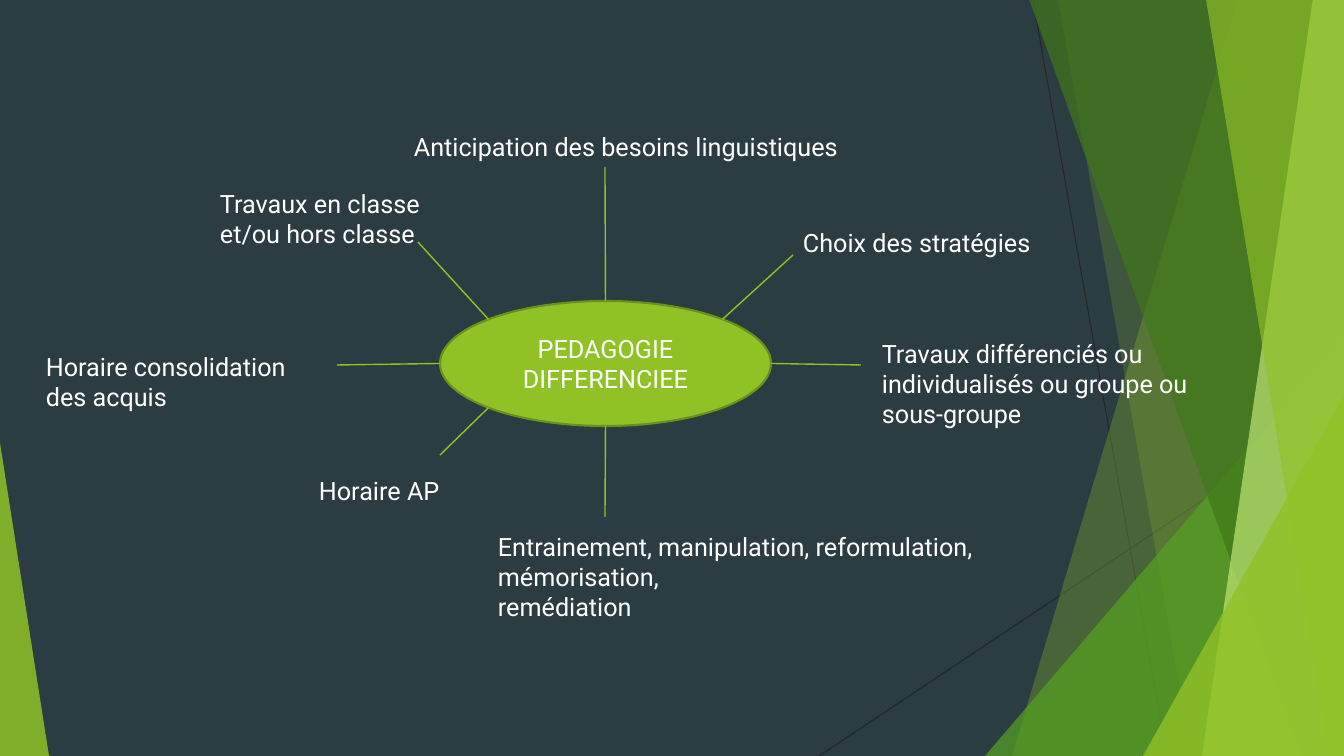
from math import cos, sin, radians
from pptx import Presentation
from pptx.dml.color import RGBColor
from pptx.enum.shapes import MSO_CONNECTOR as Link, MSO_SHAPE as Kind
from pptx.enum.text import MSO_ANCHOR as Anchor, MSO_AUTO_SIZE as Auto, PP_ALIGN as Align
from pptx.oxml.ns import qn
from pptx.util import Pt
from lxml.etree import SubElement

PX = 914400 / 100.8
WIDE, HIGH = 1344, 756
GREEN, WHITE = "90C226", "FFFFFF"
FONT = {"name": "Roboto", "size": Pt(18)}

RAYS = [((1033, 0), (1167, 756)), ((1344, 406), (819, 756))]
DECOR = [
    ("band", 1238, 1012, GREEN, 30),
    ("band", 1058, 1192, GREEN, 20),
    ("peak", (985, 336, 359, 420), 1, "54A021", 72),
    ("band", 1029, 1301, "3F7819", 70),
    ("band", 1313, 1202, "C0E474", 70),
    ("band", 1206, 1329, GREEN, 65),
    ("peak", (1143, 396, 201, 360), 1, GREEN, 80),
    ("peak", (0, 443, 49, 313), 0, GREEN, 85),
]
HUB = (440, 301, 331, 125)
TITLE = "PEDAGOGIE DIFFERENCIEE"
TOPICS = [
    (["Anticipation des besoins linguistiques"], (404, 126, 467, 40), 270, (605, 167)),
    (["Choix des stratégies"], (793, 222, 268, 40), 315, (793, 255)),
    (["Travaux différenciés ou individualisés ou groupe ou sous-groupe"],
     (872, 333, 368, 102), 0, (861, 365)),
    (["Travaux en classe et/ou hors classe"], (210, 183, 278, 72), 225, (418, 242)),
    (["Horaire consolidation des acquis"], (36, 346, 295, 72), 180, (337, 365)),
    (["Horaire AP"], (309, 470, 178, 40), 135, (440, 455)),
    (["Entrainement, manipulation, reformulation, mémorisation,", "remédiation"],
     (488, 526, 508, 102), 90, (605, 517)),
]


def emu(*nums):
    return [round(n * PX) for n in nums]


def tint(code):
    return RGBColor.from_string(code)


def paint(shape, code, alpha=100):
    shape.shadow.inherit = False
    shape.fill.solid()
    shape.fill.fore_color.rgb = tint(code)
    shape.line.fill.background()
    if alpha < 100:
        mark = next(shape.element.spPr.iter(qn("a:srgbClr")))
        SubElement(mark, qn("a:alpha")).set("val", str(alpha * 1000))


def line(start, end, code, width):
    link = shapes.add_connector(Link.STRAIGHT, *emu(*start, *end))
    link.line.color.rgb = tint(code)
    link.line.width = Pt(width)
    SubElement(link.element.spPr, qn("a:effectLst"))


def band(top, foot, code, alpha):
    form = shapes.build_freeform(top, -1, scale=PX)
    form.add_line_segments([(WIDE, -1), (WIDE, HIGH), (foot, HIGH)], close=True)
    paint(form.convert_to_shape(), code, alpha)


def peak(box, tip, code, alpha):
    shape = shapes.add_shape(Kind.ISOSCELES_TRIANGLE, *emu(*box))
    shape.adjustments[0] = tip
    paint(shape, code, alpha)


def write(frame, lines, align):
    frame.word_wrap = True
    for i, text in enumerate(lines):
        para = frame.add_paragraph() if i else frame.paragraphs[0]
        para.alignment = align
        run = para.add_run()
        run.text = text
        for key, val in FONT.items():
            setattr(run.font, key, val)
        run.font.color.rgb = tint(WHITE)


def rim(angle):
    left, top, width, height = HUB
    turn = radians(angle)
    return left + width / 2 * (1 + cos(turn)), top + height / 2 * (1 + sin(turn))


deck = Presentation()
deck.slide_width, deck.slide_height = emu(WIDE, HIGH)
slide = deck.slides.add_slide(deck.slide_layouts[6])
shapes = slide.shapes
slide.background.fill.solid()
slide.background.fill.fore_color.rgb = tint("2C3C43")

for start, end in RAYS:
    line(start, end, "262626", 0.75)
draw = {"band": band, "peak": peak}
for kind, *rest in DECOR:
    draw[kind](*rest)

hub = shapes.add_shape(Kind.OVAL, *emu(*HUB))
paint(hub, GREEN)
hub.line.color.rgb = tint("6B901C")
hub.line.width = Pt(1.5)
hub.text_frame.vertical_anchor = Anchor.MIDDLE
write(hub.text_frame, [TITLE], Align.CENTER)

for lines, box, angle, end in TOPICS:
    line(rim(angle), end, GREEN, 1)
    frame = shapes.add_textbox(*emu(*box)).text_frame
    write(frame, lines, Align.LEFT)
    frame.auto_size = Auto.SHAPE_TO_FIT_TEXT

deck.save("out.pptx")
